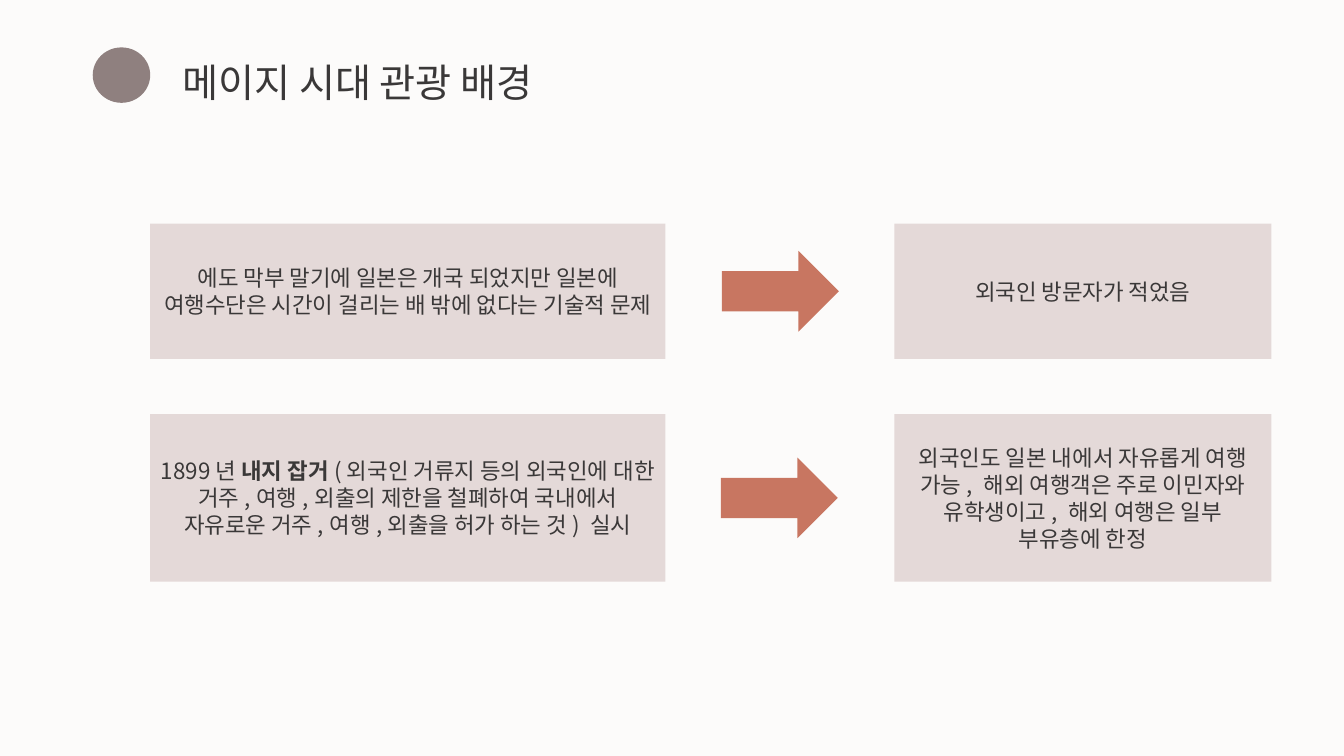
from lxml import etree
from pptx import Presentation
from pptx.dml.color import RGBColor
from pptx.enum.shapes import MSO_SHAPE
from pptx.enum.text import MSO_ANCHOR, MSO_AUTO_SIZE, PP_ALIGN
from pptx.oxml.ns import qn
from pptx.util import Inches, Pt

TITLE = "메이지 시대 관광 배경"
ROWS = [
    {
        "top": 2.22, "height": 1.34, "arrow_left": 7.16,
        "cause": [("에도 막부 말기에 일본은 개국 되었지만 일본에 여행수단은 시간이 "
                   "걸리는 배 밖에 없다는 기술적 문제", False)],
        "effect": [("외국인 방문자가 적었음", False)],
    },
    {
        "top": 4.11, "height": 1.66, "arrow_left": 7.15,
        "cause": [("1899년 ", False), ("내지 잡거", True),
                  ("(외국인 거류지 등의 외국인에 대한 거주,여행,외출의 제한을 철폐하여 "
                   "국내에서 자유로운 거주,여행,외출을 허가 하는 것) 실시", False)],
        "effect": [("외국인도 일본 내에서 자유롭게 여행 가능, 해외 여행객은 주로 이민자와 "
                    "유학생이고, 해외 여행은 일부 부유층에 한정", False)],
    },
]
COLUMNS = {"cause": (1.49, 5.11), "effect": (8.87, 3.74)}
ARROW_WIDTH, ARROW_HEIGHT = 1.16, 0.8

BACKGROUND = RGBColor(0xFC, 0xFB, 0xFA)
DOT = RGBColor(0x8F, 0x80, 0x7F)
BOX = RGBColor(0xE4, 0xD9, 0xD8)
ARROW = RGBColor(0xC8, 0x76, 0x61)
INK = RGBColor(0x3A, 0x38, 0x38)
TITLE_FONT = "Arial"
BODY_FONT = "Noto Sans CJK KR"


def add_filled(slide, kind, left, top, width, height, color):
    shape = slide.shapes.add_shape(
        kind, Inches(left), Inches(top), Inches(width), Inches(height))
    shape.shadow.inherit = False
    shape.fill.solid()
    shape.fill.fore_color.rgb = color
    shape.line.fill.background()
    return shape


def add_run(paragraph, text, size, font_name, bold=False):
    run = paragraph.add_run()
    run.text = text
    run.font.size = Pt(size)
    run.font.bold = bold
    run.font.color.rgb = INK
    run.font.name = font_name
    east_asian = etree.SubElement(run.font._element, qn("a:ea"))
    east_asian.set("typeface", BODY_FONT)


def add_title(slide):
    add_filled(slide, MSO_SHAPE.OVAL, 0.92, 0.47, 0.57, 0.55, DOT)
    box = slide.shapes.add_textbox(
        Inches(1.71), Inches(0.53), Inches(4.06), Inches(0.57))
    box.text_frame.word_wrap = False
    box.text_frame.auto_size = MSO_AUTO_SIZE.SHAPE_TO_FIT_TEXT
    add_run(box.text_frame.paragraphs[0], TITLE, 28, TITLE_FONT)


def add_row(slide, row):
    for name, (left, width) in COLUMNS.items():
        box = add_filled(slide, MSO_SHAPE.RECTANGLE, left, row["top"],
                         width, row["height"], BOX)
        box.text_frame.word_wrap = True
        box.text_frame.vertical_anchor = MSO_ANCHOR.MIDDLE
        paragraph = box.text_frame.paragraphs[0]
        paragraph.alignment = PP_ALIGN.CENTER
        for text, bold in row[name]:
            add_run(paragraph, text, 16, BODY_FONT, bold)
    arrow_top = row["top"] + (row["height"] - ARROW_HEIGHT) / 2
    add_filled(slide, MSO_SHAPE.RIGHT_ARROW, row["arrow_left"], arrow_top,
               ARROW_WIDTH, ARROW_HEIGHT, ARROW)


def main():
    presentation = Presentation()
    presentation.slide_width = Inches(13.33)
    presentation.slide_height = Inches(7.5)
    slide = presentation.slides.add_slide(presentation.slide_layouts[6])
    slide.background.fill.solid()
    slide.background.fill.fore_color.rgb = BACKGROUND
    add_title(slide)
    for row in ROWS:
        add_row(slide, row)
    presentation.save("out.pptx")


if __name__ == "__main__":
    main()
